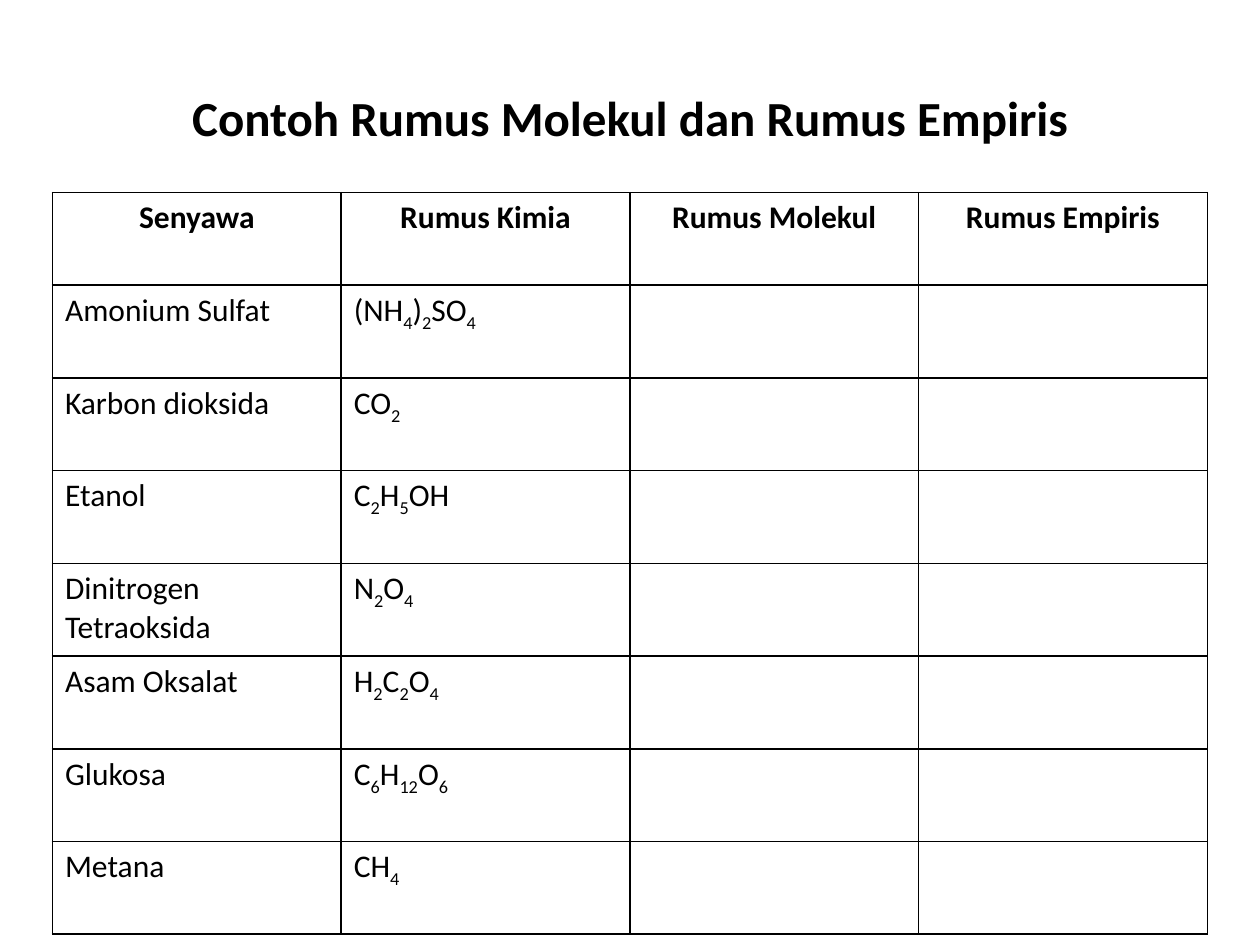
"""Build a slide with a worksheet table of molecular and empirical formulas."""
import dataclasses
import itertools

import lxml.etree
import pptx
import pptx.dml.color
import pptx.enum.text
import pptx.oxml.ns
import pptx.util

Pt = pptx.util.Pt
Align = pptx.enum.text.PP_ALIGN
Anchor = pptx.enum.text.MSO_ANCHOR


@dataclasses.dataclass(frozen=True)
class Theme:
    font: str = "Calibri"
    ink: str = "000000"
    title_size: float = 28
    body_size: float = 18
    border_width: float = 1
    subscript: str = "-25000"


@dataclasses.dataclass(frozen=True)
class Compound:
    name: str
    formula: str


THEME = Theme()
TITLE = "Contoh Rumus Molekul dan Rumus Empiris"
HEADINGS = ("Senyawa", "Rumus Kimia", "Rumus Molekul", "Rumus Empiris")
COMPOUNDS = (
    Compound("Amonium Sulfat", "(NH4)2SO4"),
    Compound("Karbon dioksida", "CO2"),
    Compound("Etanol", "C2H5OH"),
    Compound("Dinitrogen Tetraoksida", "N2O4"),
    Compound("Asam Oksalat", "H2C2O4"),
    Compound("Glukosa", "C6H12O6"),
    Compound("Metana", "CH4"),
)
COLUMN_WIDTH, ROW_HEIGHT = 165, 53


def add_run(paragraph, text: str, size: float, bold: bool = False, subscript: bool = False) -> None:
    """Add one styled run to a paragraph."""
    run = paragraph.add_run()
    run.text = text
    run.font.name = THEME.font
    run.font.size = Pt(size)
    run.font.bold = bold
    run.font.color.rgb = pptx.dml.color.RGBColor.from_string(THEME.ink)
    if subscript:
        run._r.get_or_add_rPr().set("baseline", THEME.subscript)


def add_formula(paragraph, formula: str) -> None:
    """Write a chemical formula with its digits as subscripts."""
    for is_digit, symbols in itertools.groupby(formula, str.isdigit):
        add_run(paragraph, "".join(symbols), THEME.body_size, subscript=is_digit)


def format_cell(cell) -> None:
    """Give a cell four solid borders and no fill."""
    qn = pptx.oxml.ns.qn
    properties = cell._tc.get_or_add_tcPr()
    for side in ("a:lnL", "a:lnR", "a:lnT", "a:lnB"):
        border = lxml.etree.SubElement(properties, qn(side), w=str(Pt(THEME.border_width)))
        fill = lxml.etree.SubElement(border, qn("a:solidFill"))
        lxml.etree.SubElement(fill, qn("a:srgbClr"), val=THEME.ink)
    cell.fill.background()


def add_title(slide) -> None:
    """Place and write the slide title."""
    title = slide.shapes.title
    title.left, title.top, title.width, title.height = Pt(36), Pt(21.6), Pt(648), Pt(90)
    title.text_frame.vertical_anchor = Anchor.MIDDLE
    paragraph = title.text_frame.paragraphs[0]
    paragraph.alignment = Align.CENTER
    add_run(paragraph, TITLE, THEME.title_size, bold=True)


def add_compound_table(slide) -> None:
    """Draw the table of compounds with blank answer columns."""
    row_count, column_count = len(COMPOUNDS) + 1, len(HEADINGS)
    table = slide.shapes.add_table(
        row_count, column_count, Pt(30), Pt(110),
        Pt(COLUMN_WIDTH * column_count), Pt(ROW_HEIGHT * row_count),
    ).table
    table.first_row = table.horz_banding = False
    for cell in table.iter_cells():
        format_cell(cell)
        cell.text_frame.paragraphs[0].font.size = Pt(THEME.body_size)
    for column, heading in enumerate(HEADINGS):
        paragraph = table.cell(0, column).text_frame.paragraphs[0]
        paragraph.alignment = Align.CENTER
        add_run(paragraph, heading, THEME.body_size, bold=True)
    for row, compound in enumerate(COMPOUNDS, start=1):
        add_run(table.cell(row, 0).text_frame.paragraphs[0], compound.name, THEME.body_size)
        add_formula(table.cell(row, 1).text_frame.paragraphs[0], compound.formula)


def main() -> None:
    """Create and save the presentation."""
    presentation = pptx.Presentation()
    presentation.slide_width, presentation.slide_height = Pt(720), Pt(540)
    slide = presentation.slides.add_slide(presentation.slide_layouts.get_by_name("Title Only"))
    add_title(slide)
    add_compound_table(slide)
    presentation.save("out.pptx")


if __name__ == "__main__":
    main()
